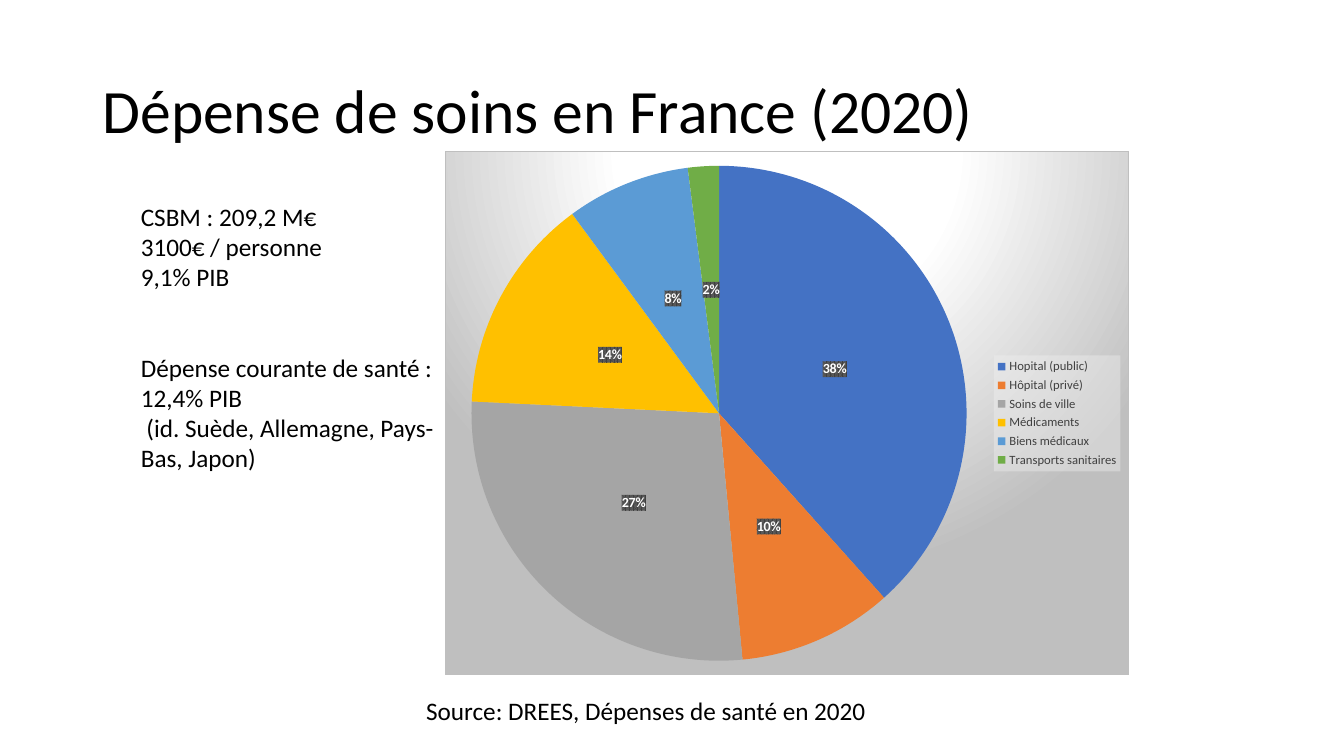
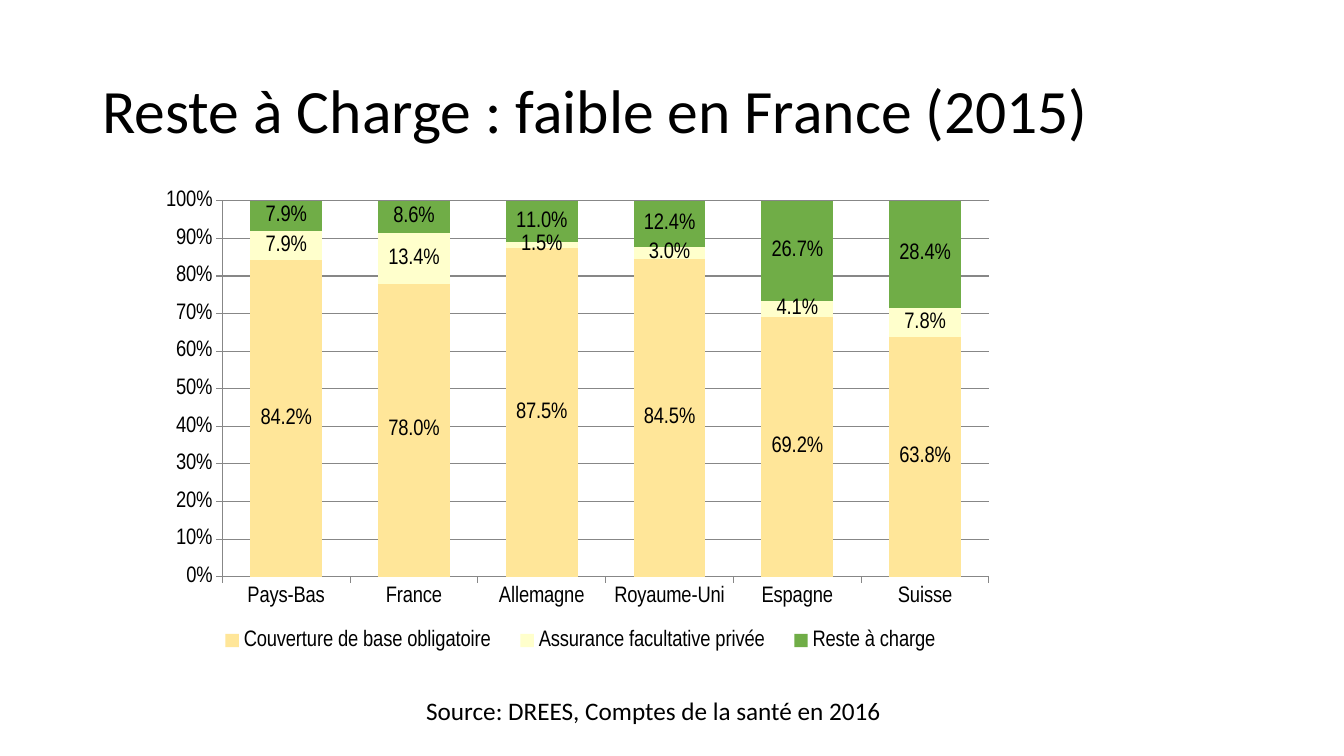
"""Builds two slides on health spending in France."""
from dataclasses import dataclass

import pptx
import pptx.chart.data
import pptx.dml.color
import pptx.enum.chart
import pptx.enum.text
import pptx.oxml
import pptx.oxml.ns
import pptx.util

Cm = pptx.util.Cm
Pt = pptx.util.Pt
ChartType = pptx.enum.chart.XL_CHART_TYPE
LegendPosition = pptx.enum.chart.XL_LEGEND_POSITION
LabelPosition = pptx.enum.chart.XL_LABEL_POSITION


@dataclass(frozen=True)
class Theme:
    """Colours, fonts and type sizes of the deck."""

    text: str = "000000"
    inverse: str = "FFFFFF"
    legend_text: str = "404040"
    panel: str = "BFBFBF"
    legend_panel: str = "F2F2F2"
    axis: str = "878787"
    label_dark: str = "404040"
    label_light: str = "595959"
    slices: tuple = ("4472C4", "ED7D31", "A5A5A5", "FFC000", "5B9BD5", "70AD47")
    columns: tuple = ("FFE699", "FFFFCC", "70AD47")
    font: str = "Calibri"
    narrow_font: str = "Arial Narrow"
    title_size: int = 44
    body_size: int = 18
    column_size: int = 16
    pie_size: int = 10
    legend_size: int = 9


def rgb(colour):
    """Turns a hex string into a colour."""
    return pptx.dml.color.RGBColor.from_string(colour)


def style_font(font, name, size, colour, bold=False):
    """Sets the face, size, colour and weight of a font."""
    font.name = name
    font.size = Pt(size)
    font.bold = bold
    font.color.rgb = rgb(colour)


def chart_xml(tag, content):
    """Parses a chart element with the given content."""
    spaces = pptx.oxml.ns.nsdecls("c", "a")
    return pptx.oxml.parse_xml(f"<c:{tag} {spaces}>{content}</c:{tag}>")


def solid(colour, alpha=100):
    """Returns the XML of a solid fill with an opacity in percent."""
    return (f'<a:solidFill><a:srgbClr val="{colour}"><a:alpha val="{alpha * 1000}"/>'
            "</a:srgbClr></a:solidFill>")


def manual_layout(bounds, target=""):
    """Returns a layout placed in percent of the chart."""
    content = target + '<c:xMode val="edge"/><c:yMode val="edge"/>'
    content += "".join(f'<c:{key} val="{value / 100:.3f}"/>'
                       for key, value in zip("xywh", bounds))
    return chart_xml("layout", f"<c:manualLayout>{content}</c:manualLayout>")


def remove_layouts(parent):
    """Removes the layouts directly inside an element."""
    for layout in parent.xpath("./c:layout"):
        parent.remove(layout)


def place_plot(chart, *bounds):
    """Fixes the inner plot area in percent of the chart."""
    plot_area = chart.element.xpath(".//c:plotArea")[0]
    remove_layouts(plot_area)
    plot_area.insert(0, manual_layout(bounds, '<c:layoutTarget val="inner"/>'))


def place_legend(chart, *bounds):
    """Fixes the legend in percent of the chart."""
    legend = chart.element.xpath(".//c:legend")[0]
    remove_layouts(legend)
    legend.xpath("./c:legendPos")[0].addnext(manual_layout(bounds))


class Presenter:
    """Holds the theme, the deck and the current page."""

    def __init__(self, theme):
        """Starts an empty widescreen deck."""
        self.theme = theme
        self.deck = pptx.Presentation()
        self.deck.slide_width = Cm(33.87)
        self.deck.slide_height = Cm(19.05)
        self.page = None

    def add_page(self, title, source):
        """Adds a page with its title and source line."""
        self.page = self.deck.slides.add_slide(self.deck.slide_layouts[5])
        box = self.page.shapes.title
        box.left, box.top, box.width, box.height = Cm(2.33), Cm(1.01), Cm(29.21), Cm(3.68)
        frame = box.text_frame
        frame.text = title
        frame.auto_size = pptx.enum.text.MSO_AUTO_SIZE.NONE
        frame.vertical_anchor = pptx.enum.text.MSO_ANCHOR.MIDDLE
        para = frame.paragraphs[0]
        para.alignment = pptx.enum.text.PP_ALIGN.LEFT
        para.line_spacing = 0.9
        style_font(para.font, self.theme.font, self.theme.title_size, self.theme.text)
        self.add_text([source], 10.49, 17.4, 12.2, 1.02, wrap=False)

    def add_text(self, lines, left, top, width, height, wrap=True):
        """Adds body text and returns its paragraphs."""
        box = self.page.shapes.add_textbox(Cm(left), Cm(top), Cm(width), Cm(height))
        frame = box.text_frame
        frame.word_wrap = wrap
        frame.auto_size = pptx.enum.text.MSO_AUTO_SIZE.SHAPE_TO_FIT_TEXT
        frame.text = "\n".join(lines)
        for para in frame.paragraphs:
            style_font(para.font, self.theme.font, self.theme.body_size, self.theme.text)
        return frame.paragraphs

    def add_chart(self, kind, categories, series, bounds, font, size, legend_position):
        """Adds a chart with its legend and value labels."""
        data = pptx.chart.data.CategoryChartData()
        data.categories = categories
        for name, values in series.items():
            data.add_series(name, values)
        frame = self.page.shapes.add_chart(kind, *map(Cm, bounds), data)
        chart = frame.chart
        chart.has_title = False
        style_font(chart.font, font, size, self.theme.text)
        chart.has_legend = True
        chart.legend.position = legend_position
        chart.legend.include_in_layout = False
        plot = chart.plots[0]
        plot.has_data_labels = True
        plot.data_labels.number_format_is_linked = False
        plot.data_labels.position = LabelPosition.CENTER
        return chart

    def add_pie(self, categories, series, bounds):
        """Adds a pie chart on a shaded panel."""
        theme = self.theme
        chart = self.add_chart(ChartType.PIE, categories, series, bounds,
                               theme.font, theme.pie_size, LegendPosition.RIGHT)
        plot = chart.plots[0]
        plot.vary_by_categories = True
        for index, colour in enumerate(theme.slices):
            fill = plot.series[0].points[index].format.fill
            fill.solid()
            fill.fore_color.rgb = rgb(colour)
        labels = plot.data_labels
        labels.number_format = "0%"
        labels.show_percentage = True
        labels.show_value = False
        style_font(labels.font, theme.font, theme.pie_size, theme.inverse, bold=True)
        style_font(chart.legend.font, theme.font, theme.legend_size, theme.legend_text)
        place_plot(chart, 3.8, 2.7, 72.5, 94.6)
        self.shade_pie(chart)

    def shade_pie(self, chart):
        """Fills the panel, legend and labels of a pie chart."""
        theme = self.theme
        stops = "".join(f'<a:gs pos="{position}"><a:srgbClr val="{colour}"/></a:gs>'
                        for position, colour in ((0, theme.inverse), (39000, theme.inverse),
                                                 (100000, theme.panel)))
        panel = (f'<a:gradFill><a:gsLst>{stops}</a:gsLst><a:path path="circle">'
                 '<a:fillToRect l="50000" t="-80000" r="50000" b="180000"/></a:path>'
                 f'</a:gradFill><a:ln w="9525">{solid(theme.panel)}</a:ln>')
        pattern = (f'<a:pattFill prst="pct75"><a:fgClr><a:srgbClr val="{theme.label_dark}"/>'
                   f'</a:fgClr><a:bgClr><a:srgbClr val="{theme.label_light}"/></a:bgClr>'
                   "</a:pattFill>")
        targets = {"/c:chartSpace/c:txPr": panel,
                   ".//c:legend/c:txPr": solid(theme.legend_panel, 39),
                   ".//c:dLbls/c:txPr": pattern}
        for target, content in targets.items():
            for text_style in chart.element.xpath(target):
                text_style.addprevious(chart_xml("spPr", content))

    def add_columns(self, categories, series, bounds):
        """Adds a stacked column chart in percent."""
        theme = self.theme
        chart = self.add_chart(ChartType.COLUMN_STACKED_100, categories, series, bounds,
                               theme.narrow_font, theme.column_size, LegendPosition.BOTTOM)
        plot = chart.plots[0]
        plot.vary_by_categories = False
        plot.gap_width = 78
        plot.overlap = 100
        plot.data_labels.number_format = "0.0%"
        plot.data_labels.show_value = True
        for column, colour in zip(plot.series, theme.columns):
            column.format.fill.solid()
            column.format.fill.fore_color.rgb = rgb(colour)
        chart.value_axis.maximum_scale = 1
        chart.value_axis.major_unit = 0.1
        chart.value_axis.has_major_gridlines = True
        chart.value_axis.tick_labels.number_format = "0%"
        chart.value_axis.tick_labels.number_format_is_linked = False
        for axis in (chart.category_axis, chart.value_axis):
            axis.major_tick_mark = pptx.enum.chart.XL_TICK_MARK.OUTSIDE
        for part in (chart.category_axis, chart.value_axis, chart.value_axis.major_gridlines):
            part.format.line.color.rgb = rgb(theme.axis)
            part.format.line.width = Pt(0.75)
        place_plot(chart, 7.7, 2.6, 89.5, 79)
        place_legend(chart, 5.5, 91, 88, 8)


def main():
    """Builds and saves the deck."""
    presenter = Presenter(Theme())
    presenter.add_page("Dépense de soins en France (2020)",
                       "Source: DREES, Dépenses de santé en 2020")
    figures = presenter.add_text(
        ["CSBM : 209,2 M€", "3100€ / personne", "9,1% PIB",
         "Dépense courante de santé : 12,4% PIB",
         " (id. Suède, Allemagne, Pays-Bas, Japon)"],
        3.3, 4.94, 7.9, 7.18)
    figures[3].space_before = Pt(43)
    presenter.add_pie(
        ["Hopital (public)", "Hôpital (privé)", "Soins de ville",
         "Médicaments", "Biens médicaux", "Transports sanitaires"],
        {"Series 1": [38, 10, 27, 14, 8, 2]},
        (11.21, 3.81, 17.25, 13.21))

    presenter.add_page("Reste à Charge : faible en France (2015)",
                       "Source: DREES, Comptes de la santé en 2016")
    presenter.add_columns(
        ["Pays-Bas", "France", "Allemagne", "Royaume-Uni", "Espagne", "Suisse"],
        {"Couverture de base obligatoire": [0.842, 0.78, 0.875, 0.845, 0.692, 0.638],
         "Assurance facultative privée": [0.079, 0.134, 0.015, 0.03, 0.041, 0.078],
         "Reste à charge": [0.079, 0.086, 0.11, 0.124, 0.267, 0.284]},
        (3.94, 4.75, 21.59, 11.99))
    presenter.deck.save("out.pptx")


if __name__ == "__main__":
    main()
